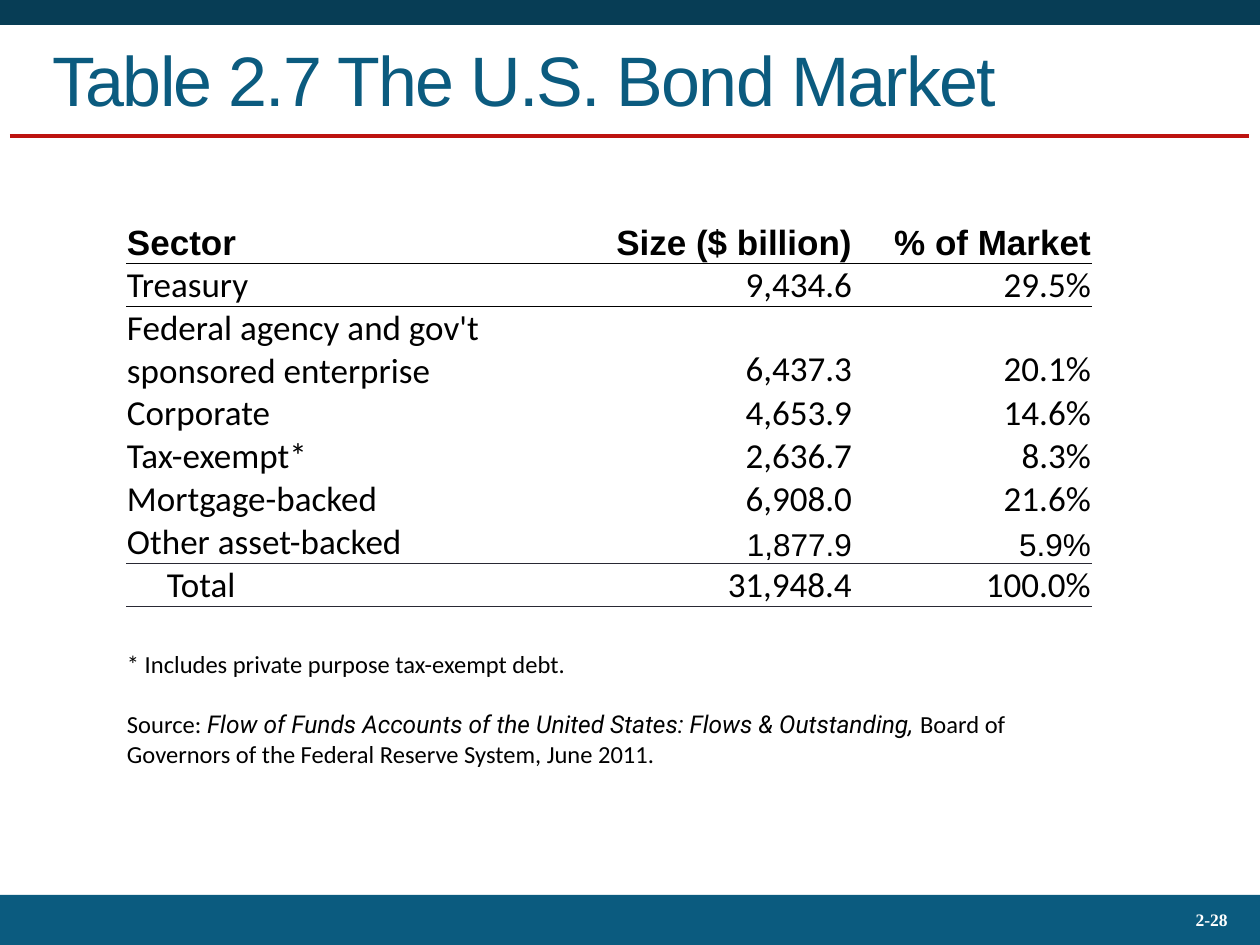
from lxml import etree
from pptx import Presentation, util as u
from pptx.dml.color import RGBColor
from pptx.enum import shapes, text
from pptx.oxml import ns

COLORS = {"navy": "073D55", "teal": "0B5B7F", "red": "BD130F", "white": "FFFFFF",
          "black": "000000", "rule": "292934"}
COLUMNS = [437, 290, 239]
HEADER = ["Sector", "Size ($ billion)", "% of Market"]
SECTORS = [
    ["Treasury", "9,434.6", "29.5%"],
    ["Federal agency and gov't sponsored enterprise", "6,437.3", "20.1%"],
    ["Corporate", "4,653.9", "14.6%"],
    ["Tax-exempt*", "2,636.7", "8.3%"],
    ["Mortgage-backed", "6,908.0", "21.6%"],
    ["Other asset-backed", "1,877.9", "5.9%"],
    ["Total", "31,948.4", "100.0%"],
]
NOTES = [
    [("* Includes private purpose tax-exempt debt.", "Calibri", False)],
    [("Source: ", "Calibri", False),
     ("Flow of Funds Accounts of the United States: Flows & Outstanding, ", "Roboto", True),
     ("Board of Governors of the Federal Reserve System, June 2011.", "Calibri", False)],
]


def px(length):
    """Turn pixels into EMU at 126 pixels to the inch."""
    return u.Emu(round(length * 914400 / 126))


def color(name):
    """Return a palette colour."""
    return RGBColor.from_string(COLORS[name])


def add_run(paragraph, words, size, font="Calibri", fill="black", bold=False, italic=False):
    """Add one formatted run to a paragraph."""
    run = paragraph.add_run()
    run.text = words
    run.font.size = u.Pt(size)
    run.font.name = font
    run.font.bold = bold
    run.font.italic = italic
    run.font.color.rgb = color(fill)
    return run


def set_margins(holder, left=1, top=1, right=1, bottom=0):
    """Set the inner margins of a cell or text frame."""
    holder.margin_left, holder.margin_top = px(left), px(top)
    holder.margin_right, holder.margin_bottom = px(right), px(bottom)


def add_band(slide, box, fill):
    """Draw a plain coloured band."""
    band = slide.shapes.add_shape(shapes.MSO_SHAPE.RECTANGLE, *map(px, box))
    band.shadow.inherit = False
    band.fill.solid()
    band.fill.fore_color.rgb = color(fill)
    band.line.fill.background()


def add_header(slide, box):
    """Place the top band, title and red rule."""
    left, top, width, height = box
    add_band(slide, (left, top, width, 25), "navy")
    rule = slide.shapes.add_connector(shapes.MSO_CONNECTOR.STRAIGHT, px(left + 10),
                                      px(top + height), px(left + width - 11), px(top + height))
    rule.line.color.rgb = color("red")
    rule.line.width = u.Pt(2.25)
    etree.SubElement(rule._element.spPr, ns.qn("a:effectLst"))
    title = slide.shapes.title
    title.left, title.top, title.width, title.height = map(px, (left + 40, top + 21, 1181, 115))
    frame = title.text_frame
    frame.auto_size = text.MSO_AUTO_SIZE.NONE
    frame.vertical_anchor = text.MSO_ANCHOR.MIDDLE
    paragraph = frame.paragraphs[0]
    paragraph.alignment = text.PP_ALIGN.LEFT
    run = add_run(paragraph, "Table 2.7 The U.S. Bond Market", 40, "Arial", "teal")
    run.font._element.set("spc", "-100")


def add_footer(slide, box):
    """Place the bottom band and page number."""
    left, top, width, height = box
    add_band(slide, box, "teal")
    number = slide.shapes.add_textbox(px(left + width - 168), px(top + 2), px(148), px(height - 5))
    frame = number.text_frame
    frame.word_wrap = True
    frame.vertical_anchor = text.MSO_ANCHOR.MIDDLE
    paragraph = frame.paragraphs[0]
    paragraph.alignment = text.PP_ALIGN.RIGHT
    add_run(paragraph, "2-28", 10, "Times New Roman", "white", bold=True)


def add_border(cell, side, fill, width):
    """Draw one edge of a table cell."""
    properties = cell._tc.get_or_add_tcPr()
    line = etree.Element(ns.qn(f"a:{side}"), w=str(u.Pt(width)))
    solid = etree.SubElement(line, ns.qn("a:solidFill"))
    etree.SubElement(solid, ns.qn("a:srgbClr"), val=COLORS[fill])
    properties.insert(0, line)


def add_bond_table(slide, box):
    """Place the bond market table with its notes row."""
    rows = [HEADER, *SECTORS]
    notes_row = len(rows) + 1
    total_row = len(rows) - 1
    frame = slide.shapes.add_table(notes_row + 1, len(COLUMNS), *map(px, box))
    table = frame.table
    table.first_row = table.horz_banding = False
    style = table._tbl.tblPr.find(ns.qn("a:tableStyleId"))
    style.text = "{2D5ABB26-0587-4C30-8999-92F81FD0307C}"
    for column, width in zip(table.columns, COLUMNS):
        column.width = px(width)
    for index, row in enumerate(table.rows):
        row.height = px({2: 84, notes_row: 84}.get(index, 42))
        for cell in row.cells:
            set_margins(cell)
            cell.vertical_anchor = text.MSO_ANCHOR.BOTTOM
            cell.fill.background()
            cell.text_frame.paragraphs[0].font.size = u.Pt(20)
    for row_index, values in enumerate(rows):
        for column_index, value in enumerate(values):
            cell = table.cell(row_index, column_index)
            paragraph = cell.text_frame.paragraphs[0]
            heading = row_index == 0
            small = row_index == total_row - 1 and column_index > 0
            if column_index:
                paragraph.alignment = text.PP_ALIGN.RIGHT
            add_run(paragraph, value, 18 if small else 20,
                    "Arial" if heading or small else "Calibri", bold=heading)
    table.cell(total_row, 0).margin_left = px(41)
    for below, fill, width in ((1, "black", 0.5), (total_row, "rule", 1)):
        for column_index in range(len(COLUMNS)):
            add_border(table.cell(below - 1, column_index), "lnB", fill, width)
            add_border(table.cell(below, column_index), "lnT", fill, width)
    add_notes(table, notes_row)


def add_notes(table, row_index):
    """Fill the merged last row with the footnote and source."""
    cell = table.cell(row_index, 0)
    cell.merge(table.cell(row_index, len(COLUMNS) - 1))
    frame = cell.text_frame
    for index, runs in enumerate(NOTES):
        paragraph = frame.add_paragraph() if index else frame.paragraphs[0]
        paragraph.space_before = u.Pt(17 * index)
        for words, font, italic in runs:
            add_run(paragraph, words, 14, font, italic=italic)


def main():
    """Build and save the slide."""
    presentation = Presentation()
    presentation.slide_width, presentation.slide_height = px(1260), px(945)
    slide = presentation.slides.add_slide(presentation.slide_layouts[5])
    add_header(slide, (0, 0, 1260, 136))
    add_footer(slide, (0, 895, 1260, 50))
    add_bond_table(slide, (126, 220, 966, 549))
    presentation.save("out.pptx")


if __name__ == "__main__":
    main()
